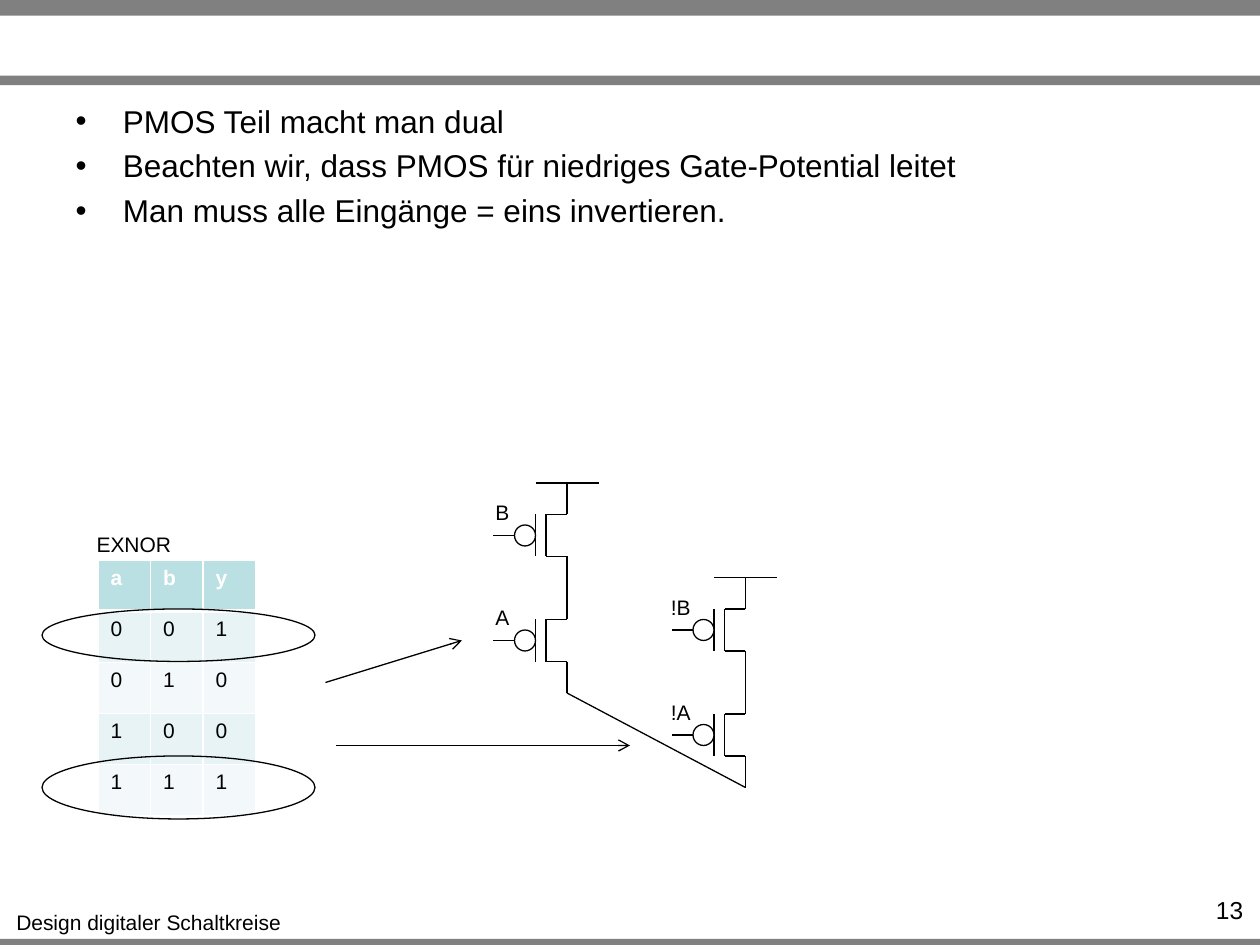
from typing import NamedTuple

from lxml import etree
from pptx import Presentation
from pptx.dml.color import RGBColor
from pptx.enum import shapes, text
from pptx.oxml import ns
from pptx.util import Pt

BLACK = RGBColor(0x00, 0x00, 0x00)
WHITE = RGBColor(0xFF, 0xFF, 0xFF)
GREY = RGBColor(0x80, 0x80, 0x80)
HEADER_FILL = RGBColor(0xBB, 0xE0, 0xE3)
BAND_FILLS = (RGBColor(0xE7, 0xF3, 0xF4), RGBColor(0xF3, 0xF9, 0xFA))

FONT = "Arial"
LINE_WIDTH = 0.75
TRANSISTOR_HEIGHT = 60

BULLETS = (
    "PMOS Teil macht man dual",
    "Beachten wir, dass PMOS für niedriges Gate-Potential leitet",
    "Man muss alle Eingänge = eins invertieren.",
)
TRUTH_TABLE = ("aby", "001", "010", "100", "111")


class Box(NamedTuple):
    left: float
    top: float
    width: float
    height: float


class Branch(NamedTuple):
    """Series PMOS transistors below a supply rail; x is the drain line."""
    x: float
    top: float
    inputs: tuple[str, ...]

    @property
    def bottom(self) -> float:
        return self.top + TRANSISTOR_HEIGHT * len(self.inputs)


BARS = (Box(0, 536.5, 720, 6), Box(0, 0, 720, 9), Box(0, 43.2, 720, 5.5))
MARKED_ROWS = (Box(24, 348, 156, 30), Box(24, 432, 156, 36))
ARROWS = ((186, 390, 264, 366), (192, 426, 360, 426))
BRANCHES = (Branch(324, 276, ("B", "A")), Branch(426, 330, ("!B", "!A")))


def points(box: Box) -> list[Pt]:
    return [Pt(value) for value in box]


def format_font(font, *, size: float, color: RGBColor = BLACK, bold: bool = False) -> None:
    font.name = FONT
    font.size = Pt(size)
    font.bold = bold
    font.color.rgb = color


def add_label(slide, content: str, box: Box, *, size: float = 12,
              align=text.PP_ALIGN.CENTER, wrap: bool = False) -> None:
    frame = slide.shapes.add_textbox(*points(box)).text_frame
    frame.word_wrap = wrap
    paragraph = frame.paragraphs[0]
    paragraph.text = content
    paragraph.alignment = align
    format_font(paragraph.font, size=size)


def add_figure(slide, kind, box: Box, *, fill: RGBColor | None = None,
               line: RGBColor | None = None) -> None:
    shape = slide.shapes.add_shape(kind, *points(box))
    shape.shadow.inherit = False
    if fill is None:
        shape.fill.background()
    else:
        shape.fill.solid()
        shape.fill.fore_color.rgb = fill
    if line is None:
        shape.line.fill.background()
    else:
        shape.line.color.rgb = line
        shape.line.width = Pt(LINE_WIDTH)


def add_line(slide, x1: float, y1: float, x2: float, y2: float, *,
             arrow: bool = False) -> None:
    connector = slide.shapes.add_connector(
        shapes.MSO_CONNECTOR.STRAIGHT, Pt(x1), Pt(y1), Pt(x2), Pt(y2))
    connector.line.color.rgb = BLACK
    connector.line.width = Pt(LINE_WIDTH)
    properties = connector._element.spPr
    if arrow:
        outline = properties.find(ns.qn("a:ln"))
        etree.SubElement(outline, ns.qn("a:tailEnd"), type="arrow")
    etree.SubElement(properties, ns.qn("a:effectLst"))


def add_transistor(slide, x: float, top: float, label: str) -> None:
    source, drain = top + 18, top + 42
    middle = (source + drain) / 2
    channel, gate = x - 12, x - 18
    for ends in (
        (x, top, x, source),
        (x, source, channel, source),
        (channel, source, channel, drain),
        (x, drain, channel, drain),
        (x, drain, x, top + TRANSISTOR_HEIGHT),
        (gate, source, gate, drain),
        (gate - 12, middle, gate - 24, middle),
    ):
        add_line(slide, *ends)
    add_figure(slide, shapes.MSO_SHAPE.OVAL, Box(gate - 12, middle - 6, 12, 12),
               fill=WHITE, line=BLACK)
    add_label(slide, label, Box(x - 53, top + 6, 32, 21.6))


def add_branch(slide, branch: Branch) -> None:
    add_line(slide, branch.x - 18, branch.top, branch.x + 18, branch.top)
    for index, label in enumerate(branch.inputs):
        add_transistor(slide, branch.x, branch.top + index * TRANSISTOR_HEIGHT, label)


def set_borders(cell, **widths: float) -> None:
    """Give the cell white borders; the keys are L, R, T and B."""
    properties = cell._tc.get_or_add_tcPr()
    for index, (side, width) in enumerate(widths.items()):
        border = etree.Element(ns.qn(f"a:ln{side}"), w=str(Pt(width)))
        fill = etree.SubElement(border, ns.qn("a:solidFill"))
        etree.SubElement(fill, ns.qn("a:srgbClr"), val=str(WHITE))
        properties.insert(index, border)


def add_truth_table(slide, box: Box) -> None:
    table = slide.shapes.add_table(
        len(TRUTH_TABLE), len(TRUTH_TABLE[0]), *points(box)).table
    for row, values in enumerate(TRUTH_TABLE):
        header = row == 0
        for column, value in enumerate(values):
            cell = table.cell(row, column)
            cell.text = value
            cell.fill.solid()
            cell.fill.fore_color.rgb = HEADER_FILL if header else BAND_FILLS[(row - 1) % 2]
            set_borders(cell, L=1, R=1, T=3 if row == 1 else 1, B=3 if header else 1)
            format_font(cell.text_frame.paragraphs[0].font, size=12,
                        color=WHITE if header else BLACK, bold=header)


def fill_body(placeholder, box: Box) -> None:
    placeholder.left, placeholder.top, placeholder.width, placeholder.height = points(box)
    frame = placeholder.text_frame
    frame.auto_size = text.MSO_AUTO_SIZE.NONE
    frame.vertical_anchor = text.MSO_ANCHOR.TOP
    frame.text = "\n".join(BULLETS)
    for index, paragraph in enumerate(frame.paragraphs):
        properties = paragraph._p.get_or_add_pPr()
        properties.set("marL", str(Pt(27)))
        properties.set("indent", str(Pt(-27)))
        etree.SubElement(properties, ns.qn("a:buChar"), char="•")
        paragraph.space_before = Pt(4 if index else 0)
        format_font(paragraph.font, size=18)


def main() -> None:
    presentation = Presentation()
    presentation.slide_width, presentation.slide_height = Pt(720), Pt(540)
    slide = presentation.slides.add_slide(presentation.slide_layouts[1])
    title = slide.shapes.title._element
    title.getparent().remove(title)

    for bar in BARS:
        add_figure(slide, shapes.MSO_SHAPE.RECTANGLE, bar, fill=GREY)
    add_label(slide, "Design digitaler Schaltkreise", Box(1.5, 516, 167, 21.6))
    add_label(slide, "13", Box(655, 508, 62.5, 17), size=14,
              align=text.PP_ALIGN.RIGHT, wrap=True)
    fill_body(slide.placeholders[1], Box(36, 54.5, 648, 114))

    add_label(slide, "EXNOR", Box(47.5, 300, 58, 21.6))
    add_truth_table(slide, Box(56, 320, 90, 146.25))
    for marker in MARKED_ROWS:
        add_figure(slide, shapes.MSO_SHAPE.OVAL, marker, line=BLACK)
    for arrow in ARROWS:
        add_line(slide, *arrow, arrow=True)

    for branch in BRANCHES:
        add_branch(slide, branch)
    left, right = BRANCHES
    add_line(slide, left.x, left.bottom, right.x, right.bottom)

    presentation.save("out.pptx")


if __name__ == "__main__":
    main()
